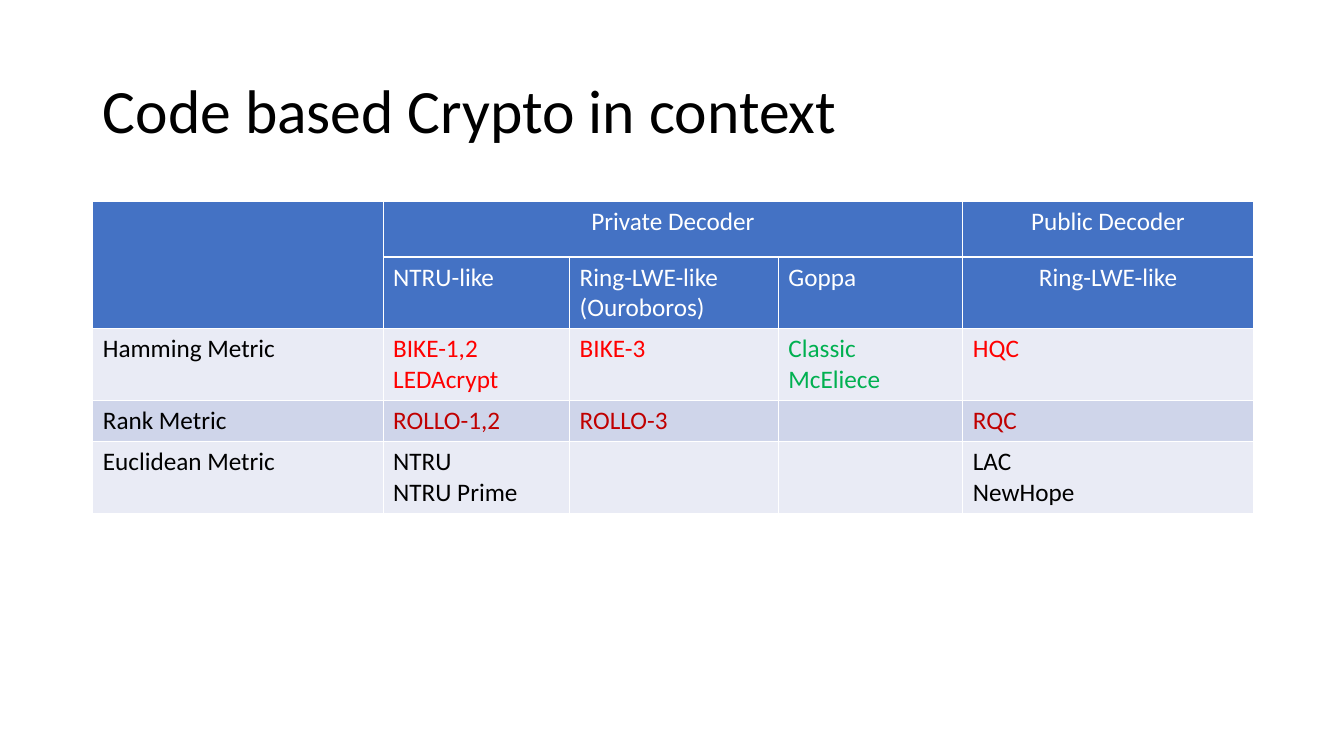
from dataclasses import dataclass

from lxml.etree import SubElement
from pptx import Presentation
from pptx.dml.color import RGBColor as RGB
from pptx.enum.text import MSO_ANCHOR as Anchor, PP_ALIGN as Align
from pptx.oxml.ns import qn
from pptx.util import Inches, Pt


@dataclass(frozen=True)
class Theme:
    font: str = "Calibri"
    title_size: Pt = Pt(44)
    table_size: Pt = Pt(18)
    border_width: Pt = Pt(1)
    black: str = "000000"
    white: str = "FFFFFF"
    header: str = "4472C4"
    light_band: str = "E9EBF5"
    dark_band: str = "CFD5EA"
    red: str = "FF0000"
    dark_red: str = "C00000"
    green: str = "00B050"


THEME = Theme()
COLUMN_WIDTHS = (2.88, 1.85, 2.07, 1.83, 2.88)
ROW_HEIGHTS = (0.55, 0.71, 0.71, 0.41, 0.71)
HEADER_ROWS = (
    ("", "Private Decoder", "", "", "Public Decoder"),
    ("", "NTRU-like", "Ring-LWE-like\n(Ouroboros)", "Goppa", "Ring-LWE-like"),
)
METRIC_ROWS = (
    (THEME.red, ("Hamming Metric", "BIKE-1,2\nLEDAcrypt", "BIKE-3", "Classic McEliece", "HQC")),
    (THEME.dark_red, ("Rank Metric", "ROLLO-1,2", "ROLLO-3", "", "RQC")),
    (THEME.black, ("Euclidean Metric", "NTRU\nNTRU Prime", "", "", "LAC\nNewHope")),
)
CENTERED_HEADINGS = ("Private Decoder", "Public Decoder")
PUBLIC_COLUMN = 4
SCHEME_COLORS = {"Classic McEliece": THEME.green}


def style_paragraph(paragraph, size, color, align=Align.LEFT):
    paragraph.alignment = align
    paragraph.font.name = THEME.font
    paragraph.font.size = size
    paragraph.font.bold = False
    paragraph.font.color.rgb = RGB.from_string(color)


def add_title(slide, text):
    title = slide.shapes.title
    title.left, title.top = Inches(0.92), Inches(0.4)
    title.width, title.height = Inches(11.5), Inches(1.45)
    title.text_frame.text = text
    title.text_frame.vertical_anchor = Anchor.MIDDLE
    heading = title.text_frame.paragraphs[0]
    heading.line_spacing = 0.9
    style_paragraph(heading, THEME.title_size, THEME.black)


def add_borders(cell):
    properties = cell._tc.get_or_add_tcPr()
    for side in ("a:lnL", "a:lnR", "a:lnT", "a:lnB"):
        line = SubElement(properties, qn(side), w=str(THEME.border_width))
        solid = SubElement(line, qn("a:solidFill"))
        SubElement(solid, qn("a:srgbClr"), val=THEME.white)


def fill_cell(cell, text, fill, color, align=Align.LEFT):
    add_borders(cell)
    cell.fill.solid()
    cell.fill.fore_color.rgb = RGB.from_string(fill)
    cell.text = text
    for paragraph in cell.text_frame.paragraphs:
        style_paragraph(paragraph, THEME.table_size, color, align)


def fill_headers(table):
    for row, headings in enumerate(HEADER_ROWS):
        for column, heading in enumerate(headings):
            centered = heading in CENTERED_HEADINGS or column == PUBLIC_COLUMN
            align = Align.CENTER if centered else Align.LEFT
            fill_cell(table.cell(row, column), heading, THEME.header, THEME.white, align)
    table.cell(0, 0).merge(table.cell(1, 0))
    table.cell(0, 1).merge(table.cell(0, 3))


def fill_metrics(table):
    for index, (row_color, entries) in enumerate(METRIC_ROWS):
        band = THEME.dark_band if index % 2 else THEME.light_band
        for column, entry in enumerate(entries):
            color = SCHEME_COLORS.get(entry, row_color) if column else THEME.black
            fill_cell(table.cell(len(HEADER_ROWS) + index, column), entry, band, color)


def add_scheme_table(slide):
    table = slide.shapes.add_table(
        len(ROW_HEIGHTS), len(COLUMN_WIDTHS), Inches(0.92), Inches(2),
        Inches(sum(COLUMN_WIDTHS)), Inches(sum(ROW_HEIGHTS)),
    ).table
    table.first_row = table.horz_banding = False
    for column, width in zip(table.columns, COLUMN_WIDTHS):
        column.width = Inches(width)
    for row, height in zip(table.rows, ROW_HEIGHTS):
        row.height = Inches(height)
    fill_headers(table)
    fill_metrics(table)


def main():
    deck = Presentation()
    deck.slide_width, deck.slide_height = Inches(13.33), Inches(7.5)
    title_only = deck.slide_layouts.get_by_name("Title Only")
    slide = deck.slides.add_slide(title_only)
    add_title(slide, "Code based Crypto in context")
    add_scheme_table(slide)
    deck.save("out.pptx")


if __name__ == "__main__":
    main()
